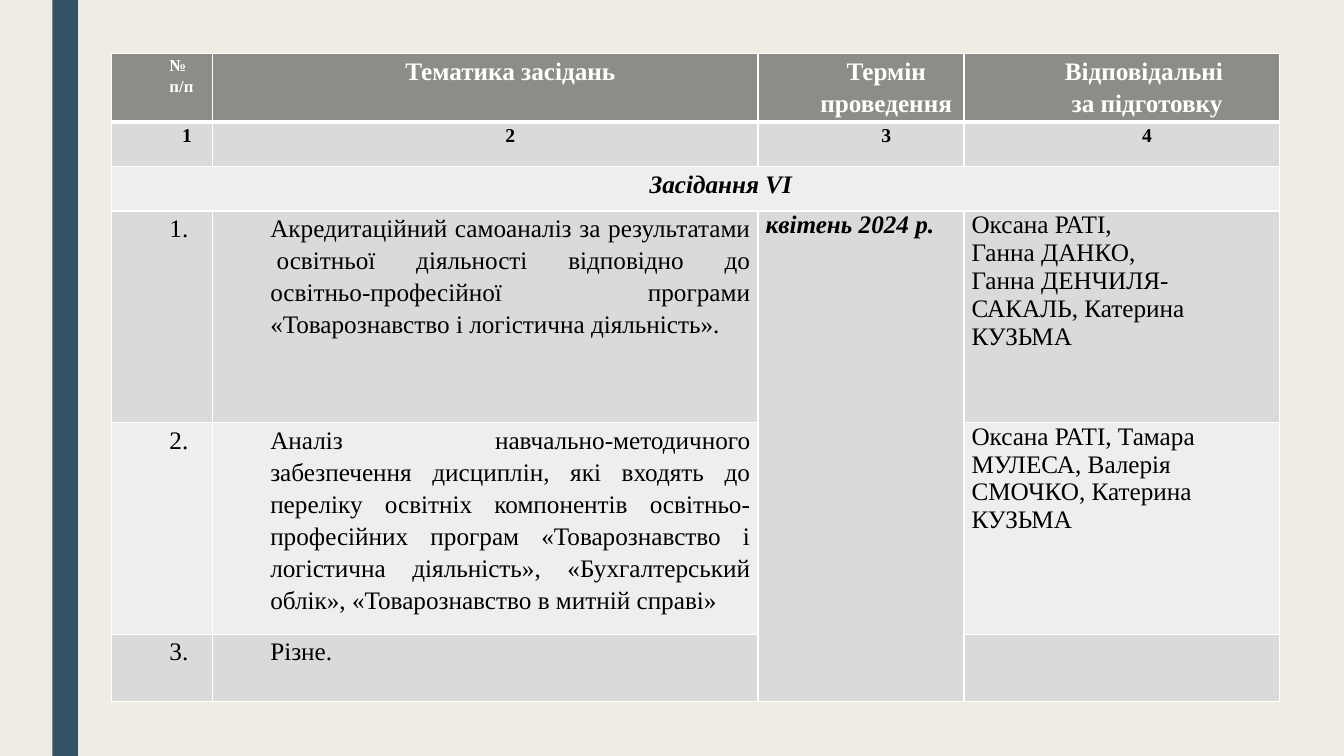
import lxml.etree
import pptx
import pptx.dml.color
import pptx.enum.shapes
import pptx.enum.text
import pptx.oxml.ns
import pptx.util

COLORS = {"back": "EFEDE3", "bar": "325366", "head": "8C8D86", "dark": "DADBD9",
          "light": "EEEEED", "white": "FFFFFF", "black": "000000"}
WIDE, HIGH = pptx.util.Inches(13.33), pptx.util.Inches(7.5)
FONT = "Times New Roman"
HARD = chr(160)  # no-break space

# Percent of the slide's width and height
LEFT, TOP = 8.3, 7.1
COLS = [7.5, 40.6, 15.33, 23.5]
ROWS = [9.07, 5.87, 5.87, 28, 28, 8.93]
FILLS = ["head", "dark", "light", "dark", "light", "dark"]
SPANS = [((2, 0), (2, 3)), ((3, 2), (5, 2))]

ALIGN = pptx.enum.text.PP_ALIGN
PLAIN = {"size": 18, "bold": False, "italic": False, "color": "black"}
HEAD = PLAIN | {"bold": True, "color": "white"}
SMALL = HEAD | {"size": 12}
COUNT = PLAIN | {"size": 14, "bold": True}
STRONG = PLAIN | {"bold": True, "italic": True}

# Paragraph formats: alignment and line spacing, left indent in inches
MID = {"alignment": ALIGN.CENTER, "line_spacing": 1.15}, 0.5
FULL = {"alignment": ALIGN.JUSTIFY, "line_spacing": 1.15}, 0.5
FLUSH = {"alignment": ALIGN.JUSTIFY}, 0
NEAR = {"alignment": ALIGN.LEFT}, 0

# One entry per filled cell: lines, font, paragraph format
CELLS = {
    (0, 0): (["№", "п/п"], SMALL, FULL),
    (0, 1): (["Тематика засідань"], HEAD, MID),
    (0, 2): (["Термін проведення"], HEAD, MID),
    (0, 3): (["Відповідальні ", "за підготовку"], HEAD, MID),
    (2, 0): (["Засідання VІ"], STRONG, MID),
    (3, 1): (["Акредитаційний самоаналіз за результатами "
              f"{HARD}освітньої діяльності "
              "відповідно до освітньо-професійної програми "
              "«Товарознавство і логістична діяльність»."], PLAIN, FULL),
    (3, 2): (["квітень 2024 р."], STRONG, FLUSH),
    (3, 3): (["Оксана РАТІ,", "Ганна ДАНКО,",
              "Ганна ДЕНЧИЛЯ-САКАЛЬ, Катерина КУЗЬМА"], PLAIN, NEAR),
    (4, 1): (["Аналіз навчально-методичного забезпечення дисциплін, які входять до "
              "переліку освітніх компонентів освітньо-професійних програм "
              "«Товарознавство і логістична діяльність», «Бухгалтерський облік», "
              "«Товарознавство в митній справі»"], PLAIN, FULL),
    (4, 3): (["Оксана РАТІ, Тамара МУЛЕСА, Валерія СМОЧКО, Катерина КУЗЬМА"],
             PLAIN, NEAR),
    (5, 1): (["Різне."], PLAIN, FULL),
}
CELLS |= {(1, col): ([str(col + 1)], COUNT, MID) for col in range(4)}
CELLS |= {(row + 2, 0): ([f"{row}."], PLAIN, FULL) for row in range(1, 4)}


def across(share):
    return round(WIDE * share / 100)


def down(share):
    return round(HIGH * share / 100)


def assign(item, values):
    for name, value in values.items():
        setattr(item, name, value)


def paint(fill, color):
    fill.solid()
    fill.fore_color.rgb = pptx.dml.color.RGBColor.from_string(COLORS[color])


def edge(cell, side, width):
    """Draw one white border of a cell, width in points."""
    name = pptx.oxml.ns.qn
    line = lxml.etree.SubElement(cell._tc.get_or_add_tcPr(), name(f"a:ln{side}"),
                                 w=str(pptx.util.Pt(width)))
    solid = lxml.etree.SubElement(line, name("a:solidFill"))
    lxml.etree.SubElement(solid, name("a:srgbClr"), val=COLORS["white"])


def write(cell, lines, font, layout):
    frame = cell.text_frame
    form, indent = layout
    for spot, text in enumerate(lines):
        para = frame.add_paragraph() if spot else frame.paragraphs[0]
        assign(para, form)
        props = para._p.get_or_add_pPr()
        props.set("marL", str(pptx.util.Inches(indent)))
        props.set("indent", "0")
        run = para.add_run()
        run.text = text
        look = dict(font)
        tone = look.pop("color")
        look["size"] = pptx.util.Pt(look["size"])
        assign(run.font, look | {"name": FONT})
        run.font.color.rgb = pptx.dml.color.RGBColor.from_string(COLORS[tone])


def dress(cell, row):
    """Set the margins, borders and fill of a cell by its row."""
    side = pptx.util.Pt(5.4)
    assign(cell, {"margin_left": side, "margin_right": side,
                  "margin_top": 0, "margin_bottom": 0})
    widths = {"L": 1, "R": 1, "T": 3 if row == 1 else 1, "B": 3 if row == 0 else 1}
    for name, width in widths.items():
        edge(cell, name, width)
    paint(cell.fill, FILLS[row])


def add_bar(slide):
    bar = slide.shapes.add_shape(pptx.enum.shapes.MSO_SHAPE.RECTANGLE,
                                 across(3.9), 0, across(1.9), HIGH)
    bar.shadow.inherit = False
    paint(bar.fill, "bar")
    bar.line.fill.background()


def add_plan(slide):
    frame = slide.shapes.add_table(len(ROWS), len(COLS), across(LEFT), down(TOP),
                                   across(sum(COLS)), down(sum(ROWS)))
    plan = frame.table
    for col, share in zip(plan.columns, COLS):
        col.width = across(share)
    for row, share in zip(plan.rows, ROWS):
        row.height = down(share)
    for row in range(len(ROWS)):
        for col in range(len(COLS)):
            dress(plan.cell(row, col), row)
    for first, last in SPANS:
        plan.cell(*first).merge(plan.cell(*last))
    for place, content in CELLS.items():
        write(plan.cell(*place), *content)


def main():
    deck = pptx.Presentation()
    assign(deck, {"slide_width": WIDE, "slide_height": HIGH})
    slide = deck.slides.add_slide(deck.slide_layouts[6])
    paint(slide.background.fill, "back")
    add_bar(slide)
    add_plan(slide)
    deck.save("out.pptx")


if __name__ == "__main__":
    main()
